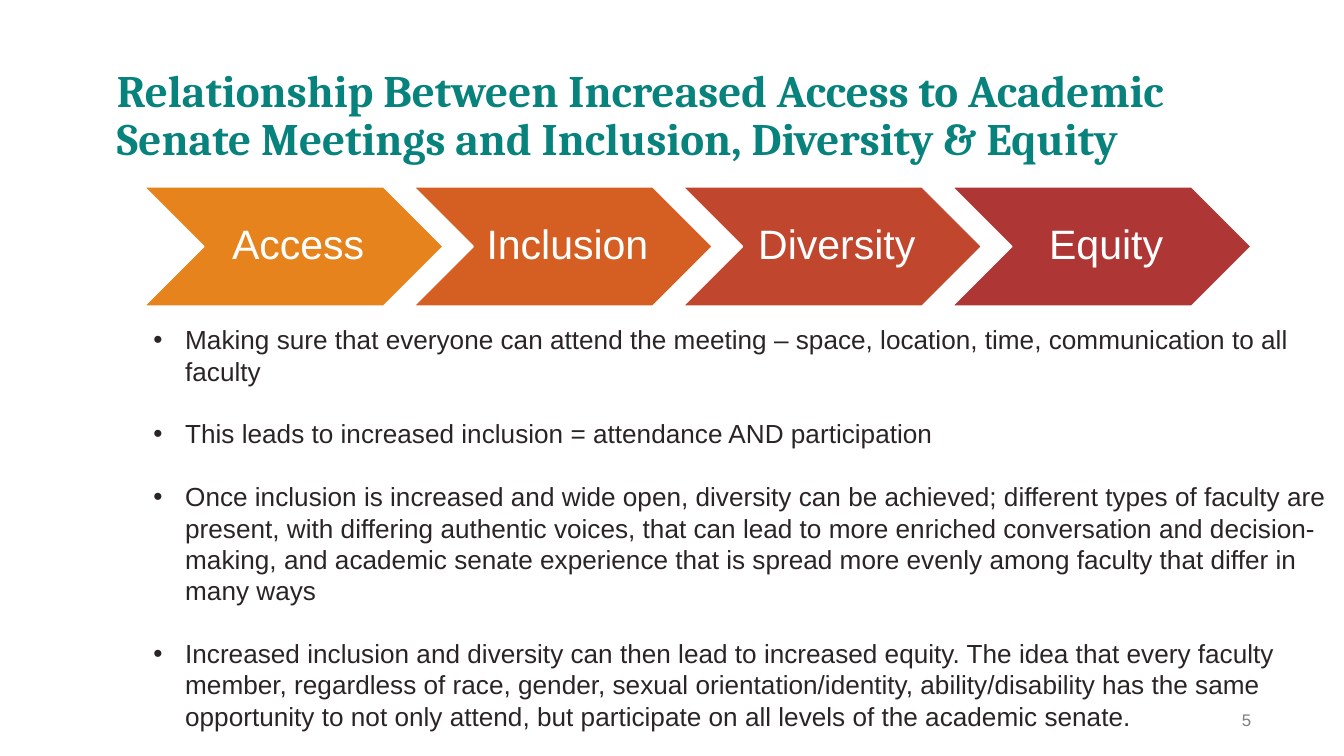
from lxml.etree import SubElement
from pptx import Presentation
from pptx.dml.color import RGBColor
from pptx.enum.shapes import MSO_SHAPE
from pptx.enum.text import MSO_ANCHOR, MSO_AUTO_SIZE, PP_ALIGN
from pptx.oxml.ns import qn
from pptx.util import Cm, Pt

COLORS = {
    "title": "07827C",
    "body": "2B2425",
    "number": "7F7F7F",
    "white": "FFFFFF",
}
STEPS = [
    ("Access", "E7831D"),
    ("Inclusion", "D55F23"),
    ("Diversity", "C0472D"),
    ("Equity", "AE3635"),
]
POINTS = [
    "Making sure that everyone can attend the meeting – space, location, time, "
    "communication to all faculty",
    "This leads to increased inclusion = attendance AND participation",
    "Once inclusion is increased and wide open, diversity can be achieved; different "
    "types of faculty are present, with differing authentic voices, that can lead to "
    "more enriched conversation and decision-making, and academic senate experience "
    "that is spread more evenly among faculty that differ in many ways",
    "Increased inclusion and diversity can then lead to increased equity. The idea that "
    "every faculty member, regardless of race, gender, sexual orientation/identity, "
    "ability/disability has the same opportunity to not only attend, but participate on "
    "all levels of the academic senate.",
]


def rgb(value):
    return RGBColor.from_string(value)


def set_frame(frame, anchor=MSO_ANCHOR.TOP, insets=(0.18, 0.1, 0.18, 0.1)):
    frame.word_wrap = True
    frame.auto_size = MSO_AUTO_SIZE.NONE
    frame.vertical_anchor = anchor
    (frame.margin_left, frame.margin_top,
     frame.margin_right, frame.margin_bottom) = map(Cm, insets)


def write_text(para, text, size, color, font="Arial", bold=False,
               align=PP_ALIGN.LEFT, spacing=None):
    para.alignment = align
    para.line_spacing = spacing
    span = para.add_run()
    span.text = text
    span.font.name = font
    span.font.size = Pt(size)
    span.font.bold = bold
    span.font.color.rgb = rgb(color)


def add_bullet(para, color):
    props = para._p.get_or_add_pPr()
    props.set("marL", str(Cm(0.6)))
    props.set("indent", str(-Cm(0.6)))
    bullet_color = SubElement(props, qn("a:buClr"))
    SubElement(bullet_color, qn("a:srgbClr"), val=color)
    SubElement(props, qn("a:buFont"), typeface="Arial")
    SubElement(props, qn("a:buChar"), char="•")


def add_text(page, text, left, top, width, height, anchor,
             insets=(0.18, 0.1, 0.18, 0.1), **text_format):
    box = page.shapes.add_textbox(Cm(left), Cm(top), Cm(width), Cm(height))
    set_frame(box.text_frame, anchor, insets)
    write_text(box.text_frame.paragraphs[0], text, **text_format)


def add_chevrons(page, left=2.72, top=3.53, width=5.66, height=2.26, pitch=5.09):
    for index, (label, color) in enumerate(STEPS):
        chevron = page.shapes.add_shape(
            MSO_SHAPE.CHEVRON, Cm(left + index * pitch), Cm(top), Cm(width), Cm(height))
        chevron.shadow.inherit = False
        chevron.fill.solid()
        chevron.fill.fore_color.rgb = rgb(color)
        chevron.line.color.rgb = rgb(COLORS["white"])
        chevron.line.width = Pt(1)
        set_frame(chevron.text_frame, MSO_ANCHOR.MIDDLE, (0.25, 0.08, 0.08, 0.08))
        write_text(chevron.text_frame.paragraphs[0], label, 22, COLORS["white"],
                   align=PP_ALIGN.CENTER, spacing=0.9)


def add_points(page):
    box = page.shapes.add_textbox(Cm(2.72), Cm(6.02), Cm(22.96), Cm(8.59))
    frame = box.text_frame
    set_frame(frame)
    for index, text in enumerate(POINTS):
        para = frame.add_paragraph() if index else frame.paragraphs[0]
        if index:
            para.space_before = Pt(16.8)
        add_bullet(para, COLORS["body"])
        write_text(para, text, 14, COLORS["body"])


def main():
    deck = Presentation()
    deck.slide_width, deck.slide_height = Cm(25.4), Cm(14.29)
    page = deck.slides.add_slide(deck.slide_layouts[6])
    add_text(page, "Relationship Between Increased Access to Academic Senate Meetings "
             "and Inclusion, Diversity & Equity", 2.03, 0.46, 21.92, 2.77,
             MSO_ANCHOR.BOTTOM, size=24.1, color=COLORS["title"], font="Cambria",
             bold=True, spacing=0.9)
    add_chevrons(page)
    add_text(page, "5", 21.74, 13.23, 1.91, 0.76, MSO_ANCHOR.MIDDLE,
             insets=(0.18, 0.1, 0, 0.1), size=9, color=COLORS["number"],
             align=PP_ALIGN.RIGHT)
    add_points(page)
    deck.save("out.pptx")


if __name__ == "__main__":
    main()
